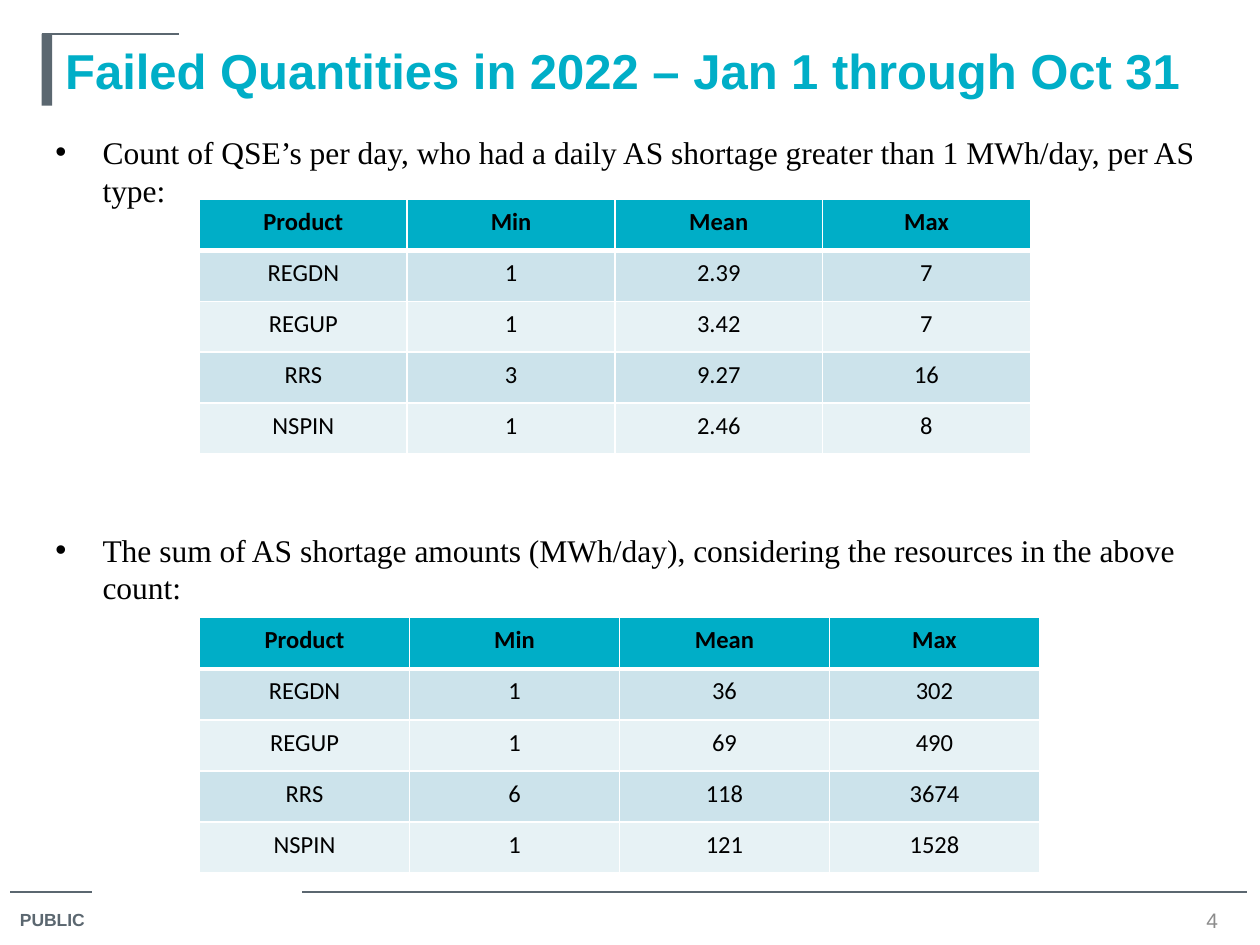
from lxml.etree import SubElement
from pptx import Presentation
from pptx.dml.color import RGBColor
from pptx.enum.shapes import MSO_CONNECTOR, MSO_SHAPE
from pptx.enum.text import MSO_ANCHOR, PP_ALIGN
from pptx.oxml.ns import qn
from pptx.util import Pt

# Content
TITLE = "Failed Quantities in 2022 – Jan 1 through Oct 31"
BULLETS = [
    "Count of QSE’s per day, who had a daily AS shortage greater than 1 MWh/day, per AS type:",
    "The sum of AS shortage amounts (MWh/day), considering the resources in the above count:",
]
BULLET_GAP = 184
HEADER = ("Product", "Min", "Mean", "Max")
COUNT_ROWS = [
    ("REGDN", "1", "2.39", "7"),
    ("REGUP", "1", "3.42", "7"),
    ("RRS", "3", "9.27", "16"),
    ("NSPIN", "1", "2.46", "8"),
]
SUM_ROWS = [
    ("REGDN", "1", "36", "302"),
    ("REGUP", "1", "69", "490"),
    ("RRS", "6", "118", "3674"),
    ("NSPIN", "1", "121", "1528"),
]
# rows, left, top, column width, row height
TABLES = [
    (COUNT_ROWS, 114, 114, 118.7, 29.1),
    (SUM_ROWS, 114, 353, 120, 29.2),
]
# left, right, y
RULES = [(5.8, 52.6, 509.8), (172.8, 712.8, 509.8), (23.8, 102.2, 19.4)]

TEAL, SLATE, GRAY = "00AEC7", "5B6770", "8C8C8C"
BLACK, WHITE = "000000", "FFFFFF"
BANDS = ("CCE3EB", "E7F2F5")


def color(value):
    return RGBColor.from_string(value)


def add_run(paragraph, text, font, size, fill, bold=False):
    run = paragraph.add_run()
    run.text = text
    run.font.name = font
    run.font.size = Pt(size)
    run.font.bold = bold
    run.font.color.rgb = color(fill)


def add_box(slide, left, top, width, height, anchor=MSO_ANCHOR.TOP):
    box = slide.shapes.add_textbox(Pt(left), Pt(top), Pt(width), Pt(height))
    frame = box.text_frame
    frame.word_wrap = True
    frame.vertical_anchor = anchor
    return frame


def add_rule(slide, left, right, y):
    rule = slide.shapes.add_connector(
        MSO_CONNECTOR.STRAIGHT, Pt(left), Pt(y), Pt(right), Pt(y))
    rule.line.color.rgb = color(SLATE)
    rule.line.width = Pt(0.75)
    SubElement(rule._element.spPr, qn("a:effectLst"))


def make_bullet(paragraph, indent):
    properties = paragraph._p.get_or_add_pPr()
    properties.set("marL", str(Pt(indent)))
    properties.set("indent", str(-Pt(indent)))
    SubElement(properties, qn("a:buFont"), typeface="Arial")
    SubElement(properties, qn("a:buChar"), char="•")


def set_borders(cell, bottom):
    properties = cell._tc.get_or_add_tcPr()
    for tag, width in (("lnL", 1), ("lnR", 1), ("lnT", 1), ("lnB", bottom)):
        line = SubElement(properties, qn(f"a:{tag}"), w=str(Pt(width)))
        fill = SubElement(line, qn("a:solidFill"))
        SubElement(fill, qn("a:srgbClr"), val=WHITE)


def add_quantity_table(slide, rows, left, top, column_width, row_height):
    lines = [HEADER] + rows
    table = slide.shapes.add_table(
        len(lines), len(HEADER), Pt(left), Pt(top),
        Pt(column_width * len(HEADER)), Pt(row_height * len(lines))).table
    for column in table.columns:
        column.width = Pt(column_width)
    for row_index, values in enumerate(lines):
        table.rows[row_index].height = Pt(row_height)
        is_header = row_index == 0
        for column_index, value in enumerate(values):
            cell = table.cell(row_index, column_index)
            cell.margin_left = cell.margin_right = Pt(4.5)
            cell.margin_top = cell.margin_bottom = Pt(4.5)
            # The thick rule under the header is shared with the first row
            set_borders(cell, 3 if is_header else 1)
            if row_index == 1:
                cell._tc.tcPr.find(qn("a:lnT")).set("w", str(Pt(3)))
            cell.fill.solid()
            cell.fill.fore_color.rgb = color(
                TEAL if is_header else BANDS[(row_index - 1) % 2])
            paragraph = cell.text_frame.paragraphs[0]
            paragraph.alignment = PP_ALIGN.CENTER
            add_run(paragraph, value, "Calibri", 14, BLACK, is_header)


def main():
    presentation = Presentation()
    presentation.slide_width, presentation.slide_height = Pt(720), Pt(540)
    slide = presentation.slides.add_slide(presentation.slide_layouts[6])

    # Rules and title bar
    for rule in RULES:
        add_rule(slide, *rule)
    bar = slide.shapes.add_shape(
        MSO_SHAPE.RECTANGLE, Pt(23.8), Pt(19.4), Pt(6), Pt(41))
    bar.shadow.inherit = False
    bar.fill.solid()
    bar.fill.fore_color.rgb = color(SLATE)
    bar.line.fill.background()

    # Title
    title = add_box(slide, 30.2, 19.4, 666, 41, MSO_ANCHOR.MIDDLE)
    add_run(title.paragraphs[0], TITLE, "Arial", 28, TEAL, True)

    # Bulleted statements, spaced to leave room for the first table
    body = add_box(slide, 24.5, 72.5, 672, 398)
    for index, text in enumerate(BULLETS):
        paragraph = body.add_paragraph() if index else body.paragraphs[0]
        make_bullet(paragraph, 27)
        if index:
            paragraph.space_before = Pt(BULLET_GAP)
        add_run(paragraph, text, "Times New Roman", 18, BLACK)

    # Tables
    for table in TABLES:
        add_quantity_table(slide, *table)

    # Footer
    label = add_box(slide, 4.3, 516.2, 55.4, 20)
    add_run(label.paragraphs[0], "PUBLIC", "Arial", 10, SLATE, True)
    number = add_box(slide, 671.8, 517, 41.8, 17.3, MSO_ANCHOR.MIDDLE)
    number.paragraphs[0].alignment = PP_ALIGN.CENTER
    add_run(number.paragraphs[0], "4", "Arial", 12, GRAY)

    presentation.save("out.pptx")


if __name__ == "__main__":
    main()
